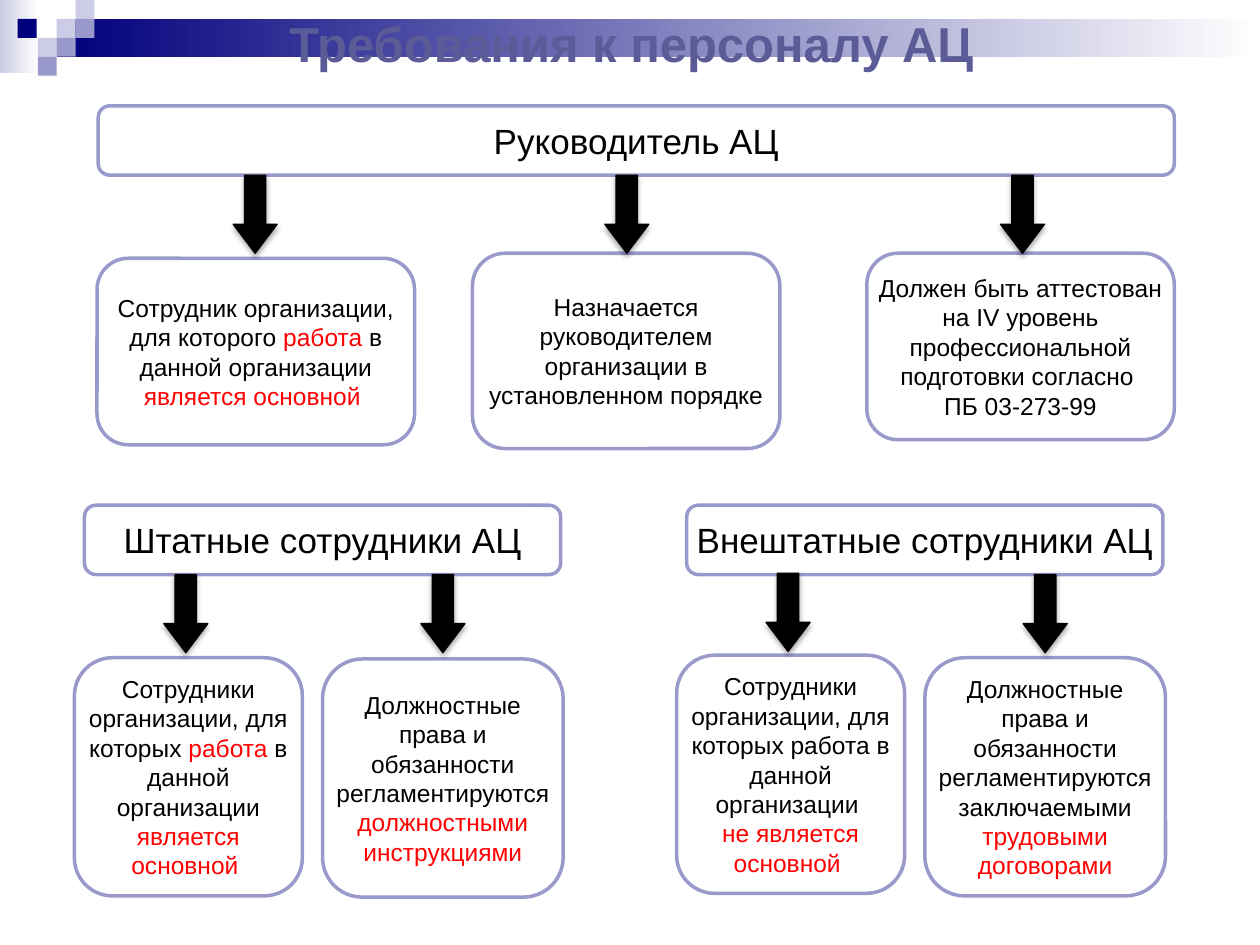
import dataclasses

import lxml.etree
import pptx
import pptx.dml.color
import pptx.enum.shapes
import pptx.enum.text
import pptx.oxml.ns
import pptx.util

Inches = pptx.util.Inches
Pt = pptx.util.Pt
Kind = pptx.enum.shapes.MSO_SHAPE
qn = pptx.oxml.ns.qn


def tint(code):
    return pptx.dml.color.RGBColor.from_string(code)


@dataclasses.dataclass(frozen=True)
class Theme:
    font: str = "Arial"
    ink: str = "000000"
    red: str = "FF0000"
    white: str = "FFFFFF"
    navy: str = "00007D"
    pale: str = "CCCCE6"
    lilac: str = "9999CC"
    title: str = "5B5B98"
    large: int = 28
    head: int = 20
    body: int = 14


class Board:
    def __init__(self, slide, theme):
        self.slide = slide
        self.theme = theme

    def shape(self, kind, place, fill):
        item = self.slide.shapes.add_shape(kind, *map(Inches, place))
        item.shadow.inherit = False
        item.fill.solid()
        item.fill.fore_color.rgb = tint(fill)
        item.line.fill.background()
        return item

    def fade(self, place, start):
        fill = self.shape(Kind.RECTANGLE, place, start).fill
        fill.gradient()
        fill.gradient_angle = 0
        for stop, code in zip(fill.gradient_stops, (start, self.theme.white)):
            stop.color.rgb = tint(code)

    def style(self, run, size, code, bold=False):
        run.font.name = self.theme.font
        run.font.size = Pt(size)
        run.font.bold = bold
        run.font.color.rgb = tint(code)

    def frame(self, item):
        frame = item.text_frame
        frame.word_wrap = True
        frame.vertical_anchor = pptx.enum.text.MSO_ANCHOR.MIDDLE
        frame.paragraphs[0].alignment = pptx.enum.text.PP_ALIGN.CENTER
        return frame

    def title(self, place, text):
        frame = self.frame(self.slide.shapes.add_textbox(*map(Inches, place)))
        line = frame.paragraphs[0]
        line.text = text
        self.style(line.runs[0], self.theme.large, self.theme.title, True)

    def box(self, place, text, size):
        item = self.shape(Kind.ROUNDED_RECTANGLE, place, self.theme.white)
        item.line.color.rgb = tint(self.theme.lilac)
        item.line.width = Pt(2)
        frame = self.frame(item)
        frame.margin_left = frame.margin_right = 0
        par = frame.paragraphs[0]
        for index, part in enumerate(text.split("*")):
            code = self.theme.red if index % 2 else self.theme.ink
            for row, words in enumerate(part.split("\n")):
                if row:
                    par.add_line_break()
                if words:
                    run = par.add_run()
                    run.text = words
                    self.style(run, size, code)
        for gap in par._p.findall(qn("a:br")):
            lxml.etree.SubElement(gap, qn("a:rPr"), sz=str(size * 100))

    def arrow(self, left, top):
        item = self.shape(Kind.DOWN_ARROW, (left, top, 0.35, 0.62), self.theme.ink)
        item.adjustments[0] = 0.485
        item.adjustments[1] = 0.659
        item.line.color.rgb = tint(self.theme.ink)
        item.line.width = Pt(0.75)
        effect = item._element.spPr.find(qn("a:effectLst"))
        shade = lxml.etree.SubElement(
            effect, qn("a:outerShdw"), blurRad=str(Pt(3.1)), dist=str(Pt(1.8)),
            dir="5400000", rotWithShape="0")
        color = lxml.etree.SubElement(shade, qn("a:srgbClr"), val=self.theme.ink)
        lxml.etree.SubElement(color, qn("a:alpha"), val="35000")


def main():
    deck = pptx.Presentation()
    deck.slide_width = Inches(10)
    deck.slide_height = Inches(7.5)
    theme = Theme()
    board = Board(deck.slides.add_slide(deck.slide_layouts[6]), theme)

    board.fade((0, 0, 0.31, 0.58), theme.pale)
    board.fade((0.45, 0.15, 9.55, 0.3), theme.navy)
    tiles = [
        (0.45, 0.15, theme.pale), (0.6, 0, theme.pale),
        (0.6, 0.15, theme.lilac), (0.3, 0.3, theme.pale),
        (0.14, 0.15, theme.navy), (0.45, 0.3, theme.lilac),
        (0.3, 0.45, theme.lilac),
    ]
    for left, top, code in tiles:
        board.shape(Kind.RECTANGLE, (left, top, 0.15, 0.15), code)
    board.title((0.51, 0, 9, 0.68), "Требования к персоналу АЦ")

    heads = [
        ((0.78, 0.84, 8.54, 0.55), "Руководитель АЦ"),
        ((0.67, 4.01, 3.78, 0.55), "Штатные сотрудники АЦ"),
        ((5.45, 4.01, 3.78, 0.55), "Внештатные сотрудники АЦ"),
    ]
    for place, text in heads:
        board.box(place, text, theme.head)

    duty = "Должностные права и обязанности регламентируются "
    staff = "Сотрудники организации, для которых "
    main_job = "*работа* в данной организации *является основной *"
    notes = [
        ((0.77, 2.05, 2.52, 1.48), (1.85, 1.39),
         "Сотрудник организации, для которого " + main_job),
        ((3.75, 2.01, 2.44, 1.55), (4.8, 1.39),
         "Назначается руководителем организации в установленном порядке"),
        ((6.88, 2.01, 2.44, 1.48), (7.94, 1.39),
         "Должен быть аттестован на IV уровень профессиональной "
         "подготовки согласно \nПБ 03-273-99"),
        ((0.59, 5.22, 1.81, 1.89), (1.3, 4.56), staff + main_job),
        ((2.56, 5.23, 1.91, 1.89), (3.34, 4.56),
         duty + "*должностными инструкциями*"),
        ((5.37, 5.2, 1.81, 1.89), (6.08, 4.55),
         staff + "работа в данной организации \n*не является основной *"),
        ((7.34, 5.22, 1.91, 1.89), (8.12, 4.56),
         duty + "заключаемыми *трудовыми договорами*"),
    ]
    for place, tip, text in notes:
        board.box(place, text, theme.body)
        board.arrow(*tip)

    deck.save("out.pptx")


if __name__ == "__main__":
    main()
